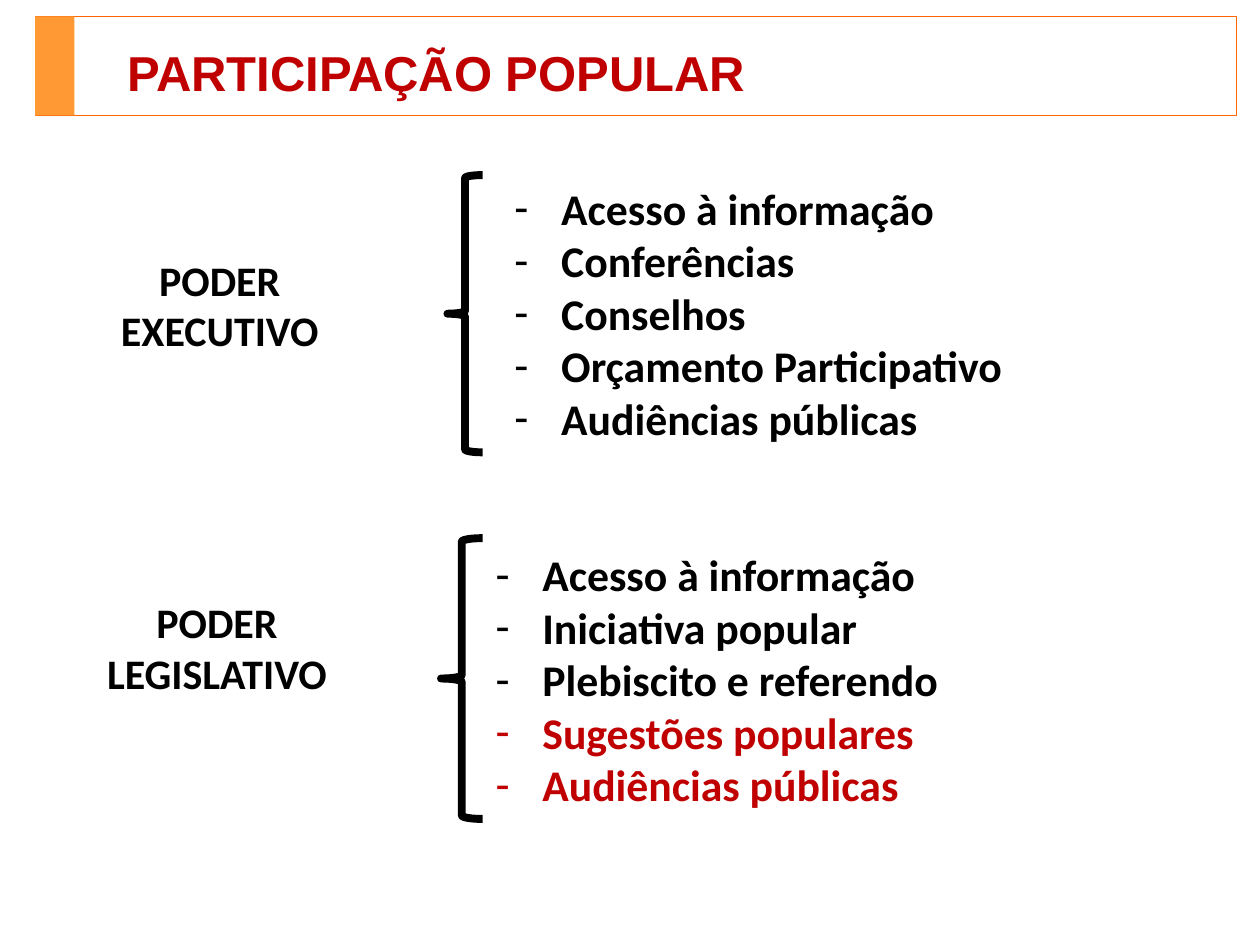
import pptx
import pptx.dml.color
import pptx.enum.shapes
import pptx.enum.text
import pptx.util
from dataclasses import dataclass
from lxml import etree
from pptx.util import Cm


@dataclass(frozen=True)
class Theme:
    ink: str = "000000"
    red: str = "C00000"
    edge: str = "FF6600"
    bar: str = "FF9933"
    head: int = 28
    label: int = 24
    item: int = 25


theme = Theme()
rgb = pptx.dml.color.RGBColor.from_string
kinds = pptx.enum.shapes.MSO_SHAPE
align = pptx.enum.text.PP_ALIGN
anchor = pptx.enum.text.MSO_ANCHOR


def style(para, size, color, face="Calibri", side=align.LEFT):
    font = para.font
    font.name, font.size, font.bold = face, pptx.util.Pt(size), True
    font.color.rgb = rgb(color)
    para.alignment = side
    para.space_before = pptx.util.Pt(0)


def draw(kind, box, fill=None, line=None, width=0.5):
    """Add a preset shape; box holds left, top, width and height in cm."""
    shape = slide.shapes.add_shape(kind, *map(Cm, box))
    shape.shadow.inherit = False
    if fill:
        shape.fill.solid()
        shape.fill.fore_color.rgb = rgb(fill)
    else:
        shape.fill.background()
    if line:
        shape.line.color.rgb = rgb(line)
        shape.line.width = pptx.util.Pt(width)
    else:
        shape.line.fill.background()


deck = pptx.Presentation()
deck.slide_width, deck.slide_height = Cm(25.4), Cm(19.05)
slide = deck.slides.add_slide(deck.slide_layouts.get_by_name("Two Content"))

# Title band
draw(kinds.RECTANGLE, (0.71, 0.33, 24.21, 2), line=theme.edge)
draw(kinds.RECTANGLE, (0.71, 0.33, 0.79, 2), fill=theme.bar)
title = slide.shapes.title
title.left, title.top, title.width, title.height = map(Cm, (2.31, 0.74, 21.64, 1.4))
title.text_frame.text = "PARTICIPAÇÃO POPULAR"
title.text_frame.vertical_anchor = anchor.MIDDLE
style(title.text_frame.paragraphs[0], theme.head, theme.red, "Arial")

# Each power: label, label box, brace box, list box, items, count of red items
powers = [
    (("PODER", "EXECUTIVO"), (1.7, 5, 5.46, 2.31),
     (9.02, 3.53, 0.71, 5.59), (10.11, 3.53, 11.81, 5.59),
     ("Acesso à informação", "Conferências", "Conselhos",
      "Orçamento Participativo", "Audiências públicas"), 0),
    (("PODER", "LEGISLATIVO"), (1.3, 11.91, 6.15, 2.31),
     (8.89, 10.85, 0.84, 5.66), (9.73, 10.92, 10.77, 5.59),
     ("Acesso à informação", "Iniciativa popular", "Plebiscito e referendo",
      "Sugestões populares", "Audiências públicas"), 2),
]

for slot, (words, spot, brace, area, items, reds) in enumerate(powers, 1):
    label = slide.shapes.add_textbox(*map(Cm, spot)).text_frame
    label.word_wrap = False
    label.text = "\n".join(words)
    for para in label.paragraphs:
        style(para, theme.label, theme.ink, side=align.CENTER)

    draw(kinds.LEFT_BRACE, brace, line=theme.ink, width=4.5)

    body = slide.placeholders[slot]
    body.left, body.top, body.width, body.height = map(Cm, area)
    frame = body.text_frame
    frame.auto_size = pptx.enum.text.MSO_AUTO_SIZE.NONE
    frame.vertical_anchor = anchor.TOP
    frame.text = "\n".join(items)
    for row, para in enumerate(frame.paragraphs):
        color = theme.red if row >= len(items) - reds else theme.ink
        style(para, theme.item, color)
        props = para._p.get_or_add_pPr()
        props.set("marL", str(Cm(0.95)))
        props.set("indent", str(-Cm(0.95)))
        marks = (("buFont", "typeface", "Arial"), ("buChar", "char", "-"))
        for at, (tag, key, value) in enumerate(marks, 1):
            mark = etree.Element(pptx.oxml.ns.qn("a:" + tag), {key: value})
            props.insert(at, mark)  # after spcBef, before defRPr

deck.save("out.pptx")
